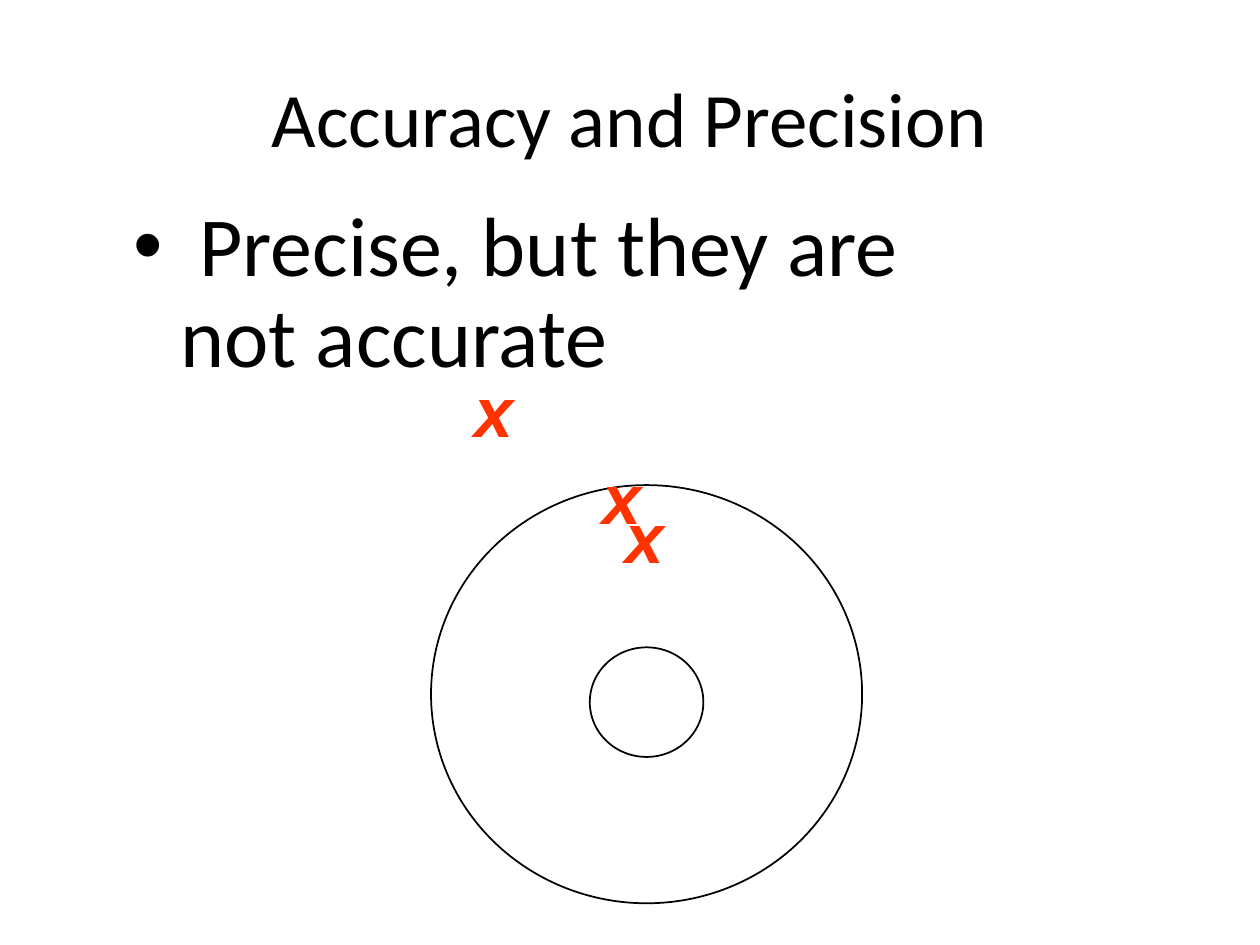
from dataclasses import dataclass

from lxml.etree import SubElement
from pptx import Presentation
from pptx.dml.color import RGBColor
from pptx.enum.shapes import MSO_SHAPE as Shape
from pptx.enum.text import MSO_ANCHOR as Anchor, PP_ALIGN as Align
from pptx.oxml.ns import qn
from pptx.util import Cm, Pt


@dataclass(frozen=True)
class Theme:
    ink: RGBColor = RGBColor(0x00, 0x00, 0x00)
    mark: RGBColor = RGBColor(0xFF, 0x33, 0x00)
    text_font: str = "Calibri"
    mark_font: str = "Arial"
    title_size: int = 44
    body_size: int = 48
    mark_size: int = 40
    outline: int = 1


THEME = Theme()


def add_text(slide, box, text, font, size, color):
    """Add a one-run text box; return its frame, paragraph and run."""
    frame = slide.shapes.add_textbox(*map(Cm, box)).text_frame
    frame.word_wrap = True
    paragraph = frame.paragraphs[0]
    run = paragraph.add_run()
    run.text = text
    run.font.name = font
    run.font.size = Pt(size)
    run.font.color.rgb = color
    return frame, paragraph, run


def add_title(slide, box, text):
    frame, paragraph, _ = add_text(
        slide, box, text, THEME.text_font, THEME.title_size, THEME.ink)
    frame.vertical_anchor = Anchor.MIDDLE
    paragraph.alignment = Align.CENTER


def add_bullet(slide, box, text):
    _, paragraph, _ = add_text(
        slide, box, text, THEME.text_font, THEME.body_size, THEME.ink)
    paragraph.line_spacing = 0.9
    paragraph.space_before = Pt(0.2 * THEME.body_size)
    properties = paragraph._p.get_or_add_pPr()
    indent = Cm(0.95)
    properties.set("marL", str(indent))
    properties.set("indent", str(-indent))
    SubElement(properties, qn("a:buFont")).set("typeface", "Arial")
    SubElement(properties, qn("a:buChar")).set("char", "•")


def add_ring(slide, box):
    ring = slide.shapes.add_shape(Shape.OVAL, *map(Cm, box))
    ring.shadow.inherit = False
    ring.fill.background()
    ring.line.color.rgb = THEME.ink
    ring.line.width = Pt(THEME.outline)


def add_hit(slide, box):
    _, _, run = add_text(
        slide, box, "x", THEME.mark_font, THEME.mark_size, THEME.mark)
    run.font.bold = True
    run.font.italic = True


def add_target(slide, box, hits):
    """Draw the target in the box, with hits offset from its top left."""
    left, top, width, height = box
    bull_width, bull_height = 2.29, 2.21
    add_ring(slide, box)
    # The bull's-eye sits slightly below the centre of the outer ring.
    add_ring(slide, (left + (width - bull_width) / 2,
                     top + (height - bull_height) / 2 + 0.16,
                     bull_width, bull_height))
    for across, down, hit_width in hits:
        add_hit(slide, (left + across, top + down, hit_width, 1.96))


def main():
    presentation = Presentation()
    presentation.slide_width = Cm(25.4)
    presentation.slide_height = Cm(19.05)
    slide = presentation.slides.add_slide(presentation.slide_layouts[6])

    add_title(slide, (1.27, 0.76, 22.86, 3.18), "Accuracy and Precision")
    add_bullet(slide, (2.44, 3.99, 16.3, 5.28),
               " Precise, but they are not accurate")
    add_target(slide, (8.69, 9.78, 8.69, 8.43),
               hits=[(0.62, -2.49, 2.03), (3.66, 0.05, 2.0), (3.2, -0.74, 1.3)])

    presentation.save("out.pptx")


if __name__ == "__main__":
    main()
